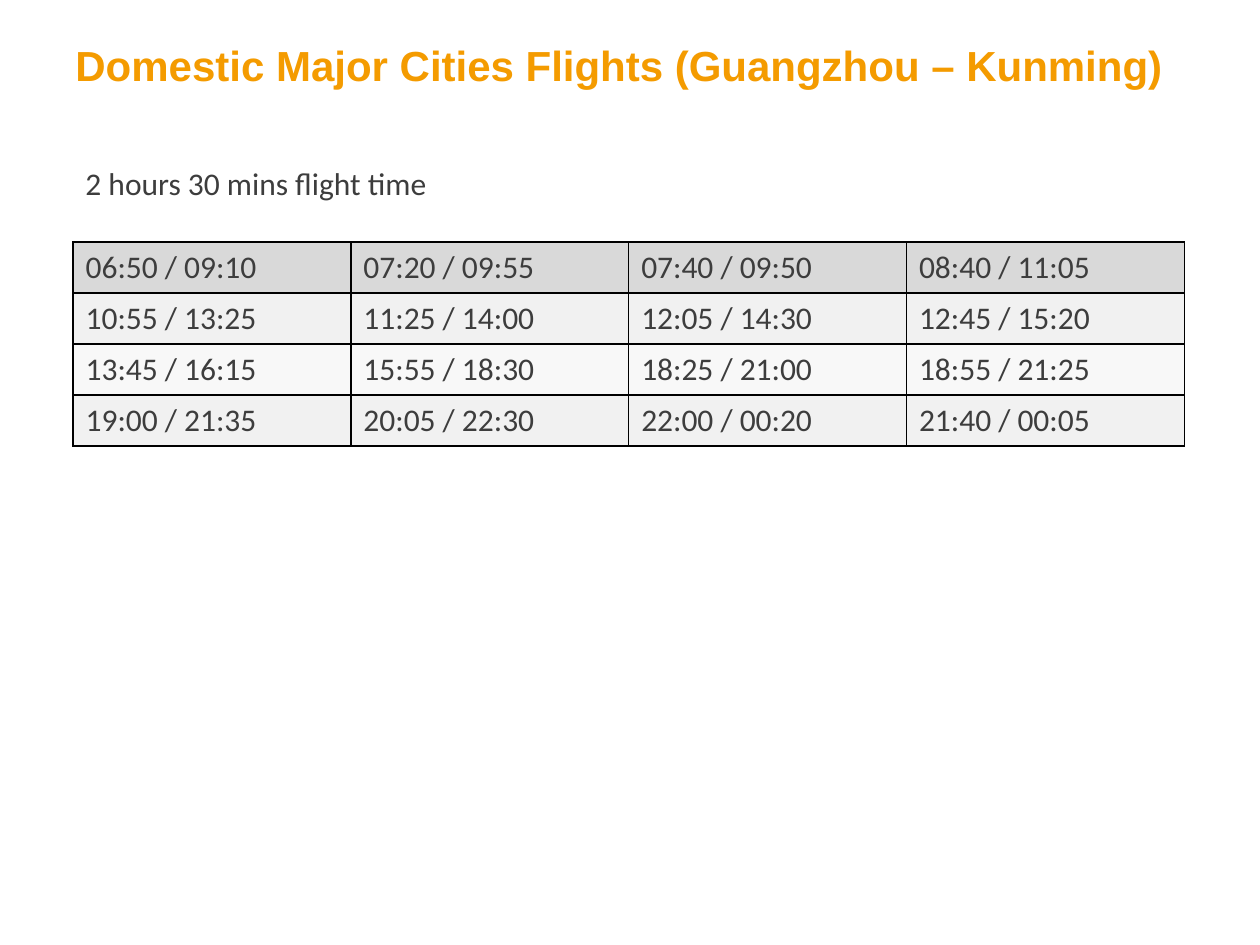
from lxml import etree
from pptx import Presentation
from pptx.dml.color import RGBColor
from pptx.enum import text as t
from pptx.oxml import ns
from pptx.util import Inches, Pt

TITLE = "Domestic Major Cities Flights (Guangzhou – Kunming)"
NOTE = "2 hours 30 mins flight time"
TIMES = [
    ("D9D9D9", ["06:50 / 09:10", "07:20 / 09:55", "07:40 / 09:50", "08:40 / 11:05"]),
    ("F1F1F1", ["10:55 / 13:25", "11:25 / 14:00", "12:05 / 14:30", "12:45 / 15:20"]),
    ("F8F8F8", ["13:45 / 16:15", "15:55 / 18:30", "18:25 / 21:00", "18:55 / 21:25"]),
    ("F1F1F1", ["19:00 / 21:35", "20:05 / 22:30", "22:00 / 00:20", "21:40 / 00:05"]),
]
LEFT, TOP, WIDTH, HIGH = 0.58, 1.92, 8.82, 1.62
INK, GOLD = "3D3D3D", "F49B00"


def color(code):
    return RGBColor.from_string(code)


def write(frame, words, size=18, face="Calibri", ink=INK, bold=False):
    line = frame.paragraphs[0]
    line.text = words
    line.alignment = t.PP_ALIGN.LEFT
    font = line.font
    font.size, font.name, font.bold = Pt(size), face, bold
    font.color.rgb = color(ink)


def add_text(slide, box, words, anchor=t.MSO_ANCHOR.TOP, **style):
    frame = slide.shapes.add_textbox(*map(Inches, box)).text_frame
    frame.word_wrap = True
    frame.vertical_anchor = anchor
    write(frame, words, **style)


def add_rules(cell):
    props = cell._tc.get_or_add_tcPr()
    for at, side in enumerate(("lnL", "lnR", "lnT", "lnB")):
        rule = etree.Element(ns.qn("a:" + side), w=str(Pt(1)))
        fill = etree.SubElement(rule, ns.qn("a:solidFill"))
        etree.SubElement(fill, ns.qn("a:srgbClr"), val="000000")
        props.insert(at, rule)


def add_times(slide):
    rows, cols = len(TIMES), len(TIMES[0][1])
    box = map(Inches, (LEFT, TOP, WIDTH, HIGH))
    table = slide.shapes.add_table(rows, cols, *box).table
    for r, (shade, row) in enumerate(TIMES):
        for c, words in enumerate(row):
            cell = table.cell(r, c)
            write(cell.text_frame, words)
            cell.fill.solid()
            cell.fill.fore_color.rgb = color(shade)
            add_rules(cell)


def main():
    deck = Presentation()
    deck.slide_width, deck.slide_height = Inches(10), Inches(7.5)
    slide = deck.slides.add_slide(deck.slide_layouts[6])
    add_text(slide, (0.5, 0.05, 9, 0.93), TITLE, t.MSO_ANCHOR.MIDDLE,
             size=24, face="Arial", ink=GOLD, bold=True)
    add_times(slide)
    add_text(slide, (LEFT, 1.25, 3.83, 0.42), NOTE)
    deck.save("out.pptx")


if __name__ == "__main__":
    main()
